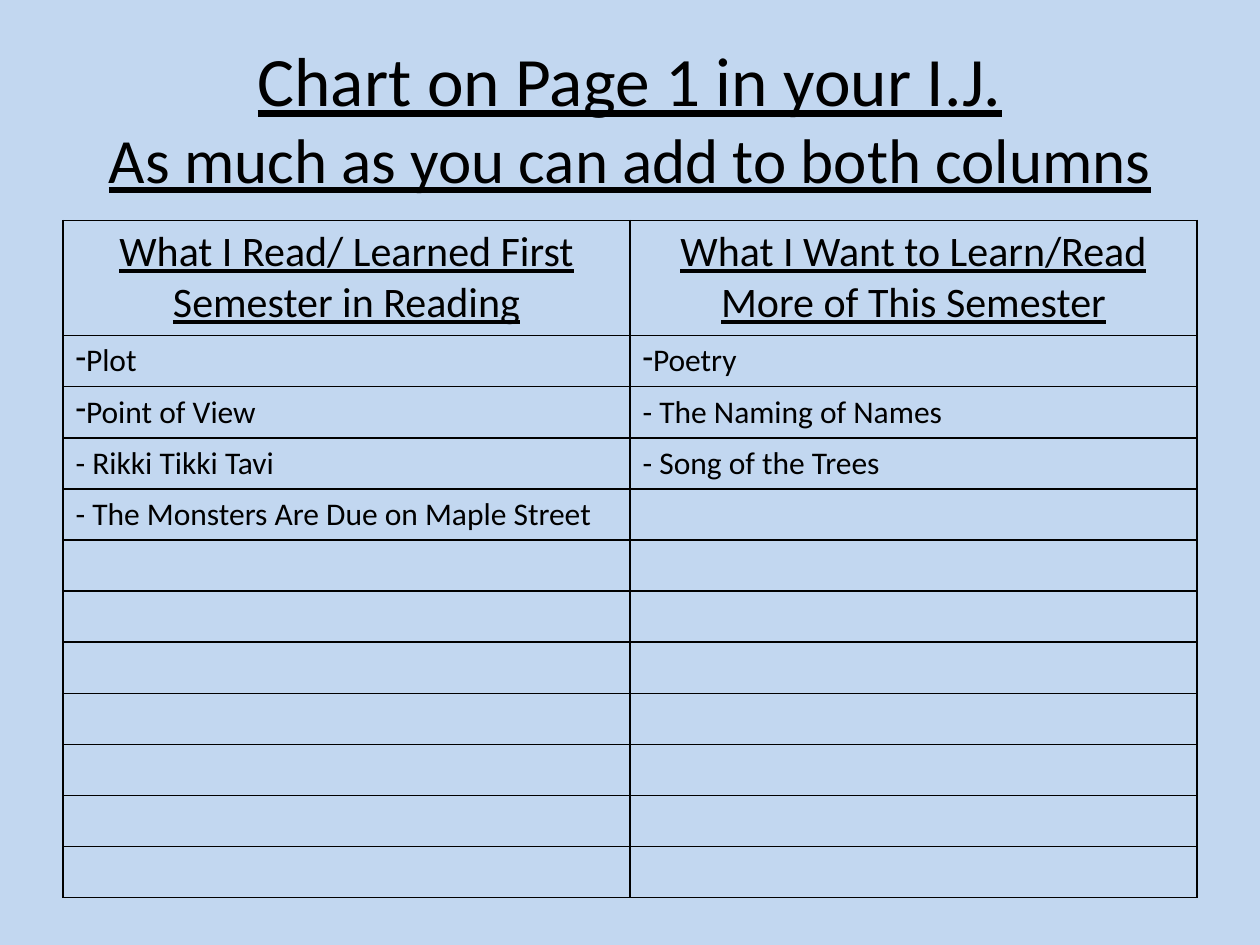
from lxml import etree
from pptx import Presentation
from pptx.dml.color import RGBColor
from pptx.enum import text as t
from pptx.oxml import ns
from pptx.util import Pt

SKY = RGBColor(0xC2, 0xD7, 0xF0)
BLACK = RGBColor(0, 0, 0)

HEADS = ("What I Read/ Learned First Semester in Reading",
         "What I Want to Learn/Read More of This Semester")
ITEMS = (
    ("*Plot", "*Poetry"),
    ("*Point of View", "- The Naming of Names"),
    ("- Rikki Tikki Tavi", "- Song of the Trees"),
    ("- The Monsters Are Due on Maple Street", ""),
)
BLANKS = 7


class Deck:
    font = "Calibri"
    ink = BLACK

    def __init__(self, width, height):
        self.show = Presentation()
        self.show.slide_width, self.show.slide_height = Pt(width), Pt(height)
        self.slide = self.show.slides.add_slide(self.show.slide_layouts[6])

    def back(self, color):
        fill = self.slide.background.fill
        fill.solid()
        fill.fore_color.rgb = color

    def style(self, run, size, under):
        font = run.font
        font.name, font.size, font.underline = self.font, Pt(size), under
        font.color.rgb = self.ink

    def title(self, box, lines, sizes):
        frame = self.slide.shapes.add_textbox(*map(Pt, box)).text_frame
        frame.word_wrap = True
        frame.vertical_anchor = t.MSO_ANCHOR.MIDDLE
        para = frame.paragraphs[0]
        para.text = "\v".join(lines)
        para.alignment = t.PP_ALIGN.CENTER
        for run, size in zip(para.runs, sizes):
            self.style(run, size, True)

    def dash(self, para):
        props = para._p.get_or_add_pPr()
        props.set("marL", "0")
        props.set("indent", "0")
        etree.SubElement(props, ns.qn("a:buChar"), char="-")

    def edge(self, cell, width):
        props = cell._tc.get_or_add_tcPr()
        for at, side in enumerate(("lnL", "lnR", "lnT", "lnB")):
            line = etree.Element(ns.qn("a:" + side), w=str(Pt(width)))
            fill = etree.SubElement(line, ns.qn("a:solidFill"))
            etree.SubElement(fill, ns.qn("a:srgbClr"), val=str(self.ink))
            props.insert(at, line)

    def cell(self, cell, words, head):
        cell.fill.background()
        self.edge(cell, 1)
        para = cell.text_frame.paragraphs[0]
        para.text = words.removeprefix("*")
        if head:
            para.alignment = t.PP_ALIGN.CENTER
        if words.startswith("*"):
            self.dash(para)
        for run in para.runs:
            self.style(run, 24 if head else 18, head)

    def table(self, box, rows, top, step):
        grid = self.slide.shapes.add_table(
            len(rows), len(rows[0]), *map(Pt, box)).table
        grid.first_row = grid.horz_banding = False
        for r, row in enumerate(rows):
            grid.rows[r].height = Pt(step if r else top)
            for c, words in enumerate(row):
                self.cell(grid.cell(r, c), words, r == 0)

    def save(self):
        self.show.save("out.pptx")


def main():
    deck = Deck(720, 540)
    deck.back(SKY)
    deck.title((36, 21.6, 648, 90),
               ("Chart on Page 1 in your I.J.",
                "As much as you can add to both columns"), (39.6, 36))
    rows = (HEADS, *ITEMS, *[("", "")] * BLANKS)
    deck.table((36, 126, 648, 387), rows, 65.8, 29.2)
    deck.save()


if __name__ == "__main__":
    main()
